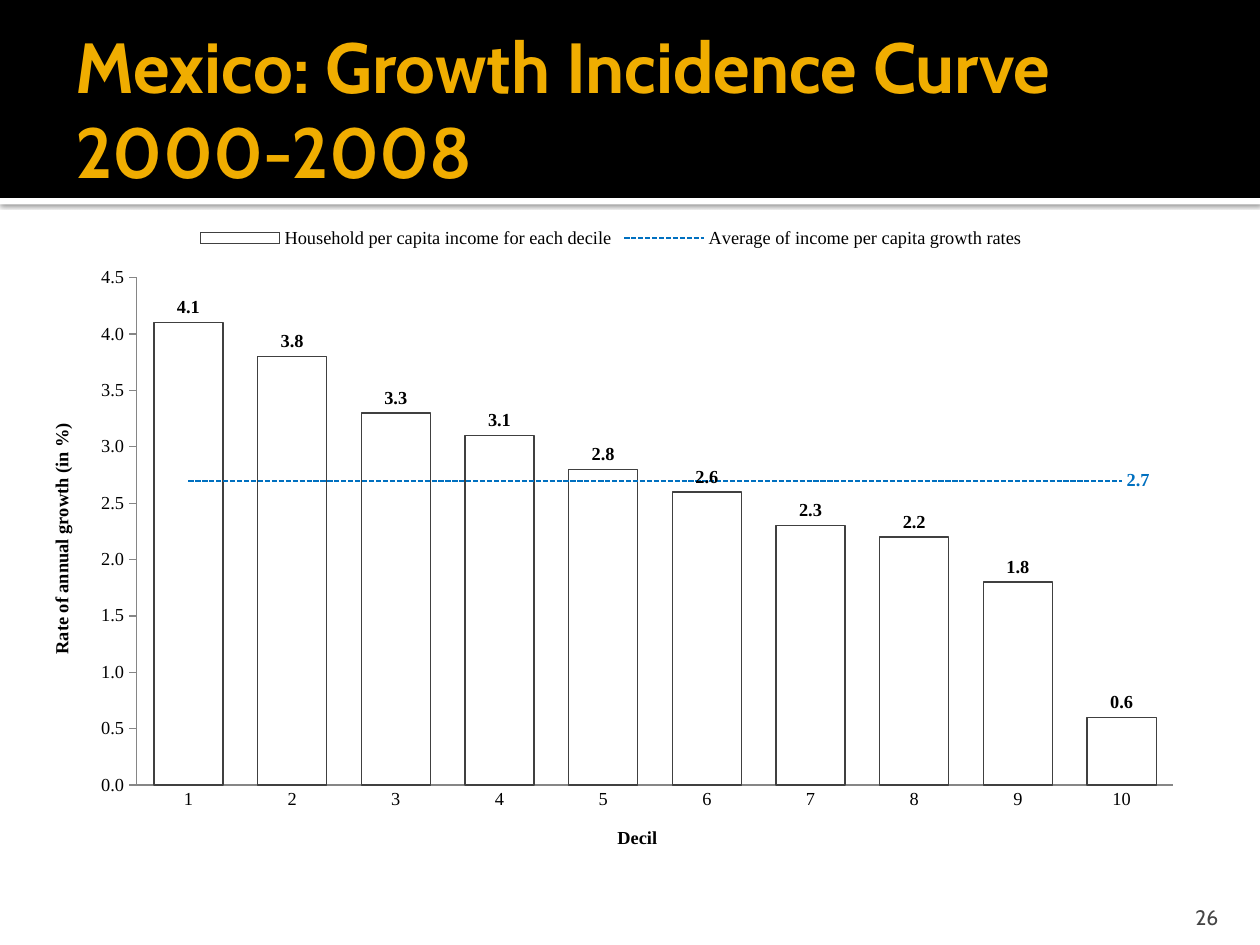
from lxml import etree
from pptx import Presentation
from pptx.chart.data import CategoryChartData
from pptx.dml.color import RGBColor
from pptx.enum.chart import XL_CHART_TYPE, XL_LABEL_POSITION, XL_LEGEND_POSITION, XL_MARKER_STYLE, XL_TICK_MARK
from pptx.enum.dml import MSO_LINE
from pptx.enum.shapes import MSO_SHAPE
from pptx.enum.text import MSO_ANCHOR, PP_ALIGN
from pptx.oxml import parse_xml
from pptx.oxml.ns import nsdecls, qn
from pptx.util import Cm, Pt

COLUMNS = XL_CHART_TYPE.COLUMN_CLUSTERED
DASHED = MSO_LINE.SQUARE_DOT
NO_TICK, OUTSIDE_TICK = XL_TICK_MARK.NONE, XL_TICK_MARK.OUTSIDE
RECTANGLE = MSO_SHAPE.RECTANGLE

COLORS = {"white": "FFFFFF", "black": "000000", "title": "F0AD00", "number": "454545",
          "outline": "404040", "axis": "868686", "average": "0070C0"}
HEADING_FONT, CHART_FONT = "Cabin", "Times New Roman"
NUMBER_FORMAT = "#,##0.0"
DECILE_GROWTH = [4.1, 3.8, 3.3, 3.1, 2.8, 2.6, 2.3, 2.2, 1.8, 0.6]
AVERAGE_GROWTH = 2.7


def color(name):
    return RGBColor.from_string(COLORS[name])


def style_font(font, name, size, color_name, bold=False):
    font.name, font.size, font.bold = name, Pt(size), bold
    font.color.rgb = color(color_name)


def style_line(line, color_name, width=0.75):
    line.color.rgb = color(color_name)
    line.width = Pt(width)


def set_insets(text_frame, left, top, right, bottom):
    text_frame.margin_left, text_frame.margin_top = left, top
    text_frame.margin_right, text_frame.margin_bottom = right, bottom


def add_band(slide, left, top, width, height, color_name):
    """Add a plain rectangle behind the title."""
    band = slide.shapes.add_shape(RECTANGLE, left, top, width, height)
    band.shadow.inherit = False
    band.fill.solid()
    band.fill.fore_color.rgb = color(color_name)
    band.line.fill.background()
    slide.shapes.title.element.addprevious(band.element)
    return band


def add_header(slide, left, top, width, height):
    rule = add_band(slide, left, top + height, width, Cm(0.13), "white")
    effects = rule.element.spPr.find(qn("a:effectLst"))
    effects.append(parse_xml(
        f'<a:outerShdw {nsdecls("a")} blurRad="{Pt(2.5)}" dist="{Pt(0.8)}" dir="5400000" '
        f'algn="t" rotWithShape="0"><a:srgbClr val="{COLORS["black"]}">'
        '<a:alpha val="60000"/></a:srgbClr></a:outerShdw>'))
    add_band(slide, left, top, width, height, "black")

    title = slide.shapes.title
    title.left, title.top = left + Cm(1.27), top + Cm(0.43)
    title.width, title.height = width - Cm(2.54), Cm(3.48)
    text_frame = title.text_frame
    text_frame.text = "Mexico: Growth Incidence Curve 2000-2008"
    text_frame.word_wrap = True
    text_frame.vertical_anchor = MSO_ANCHOR.MIDDLE
    set_insets(text_frame, Cm(0.25), Cm(0.13), Cm(0.13), Cm(0.13))
    paragraph = text_frame.paragraphs[0]
    paragraph.alignment = PP_ALIGN.LEFT
    style_font(paragraph.runs[0].font, HEADING_FONT, 40.5, "title", True)


def add_page_number(slide, left, top, width, height):
    text_frame = slide.shapes.add_textbox(left, top, width, height).text_frame
    text_frame.text = "26"
    text_frame.word_wrap = True
    text_frame.vertical_anchor = MSO_ANCHOR.BOTTOM
    set_insets(text_frame, Cm(0.25), Cm(0.13), Cm(0.25), 0)
    paragraph = text_frame.paragraphs[0]
    paragraph.alignment = PP_ALIGN.RIGHT
    style_font(paragraph.runs[0].font, HEADING_FONT, 12, "number")


def move_last_series_to_line(chart):
    """Draw the last column series as a line on the same axes."""
    bar_chart = chart._chartSpace.chart.plotArea.find(qn("c:barChart"))
    series = bar_chart.findall(qn("c:ser"))[-1]
    line_chart = parse_xml(
        f'<c:lineChart {nsdecls("c")}><c:grouping val="standard"/><c:varyColors val="0"/>'
        '<c:marker val="1"/></c:lineChart>')
    for bar_only in series.findall(qn("c:invertIfNegative")):
        series.remove(bar_only)
    line_chart.insert(2, series)
    for axis_id in bar_chart.findall(qn("c:axId")):
        etree.SubElement(line_chart, qn("c:axId")).set("val", axis_id.get("val"))
    bar_chart.addnext(line_chart)


def set_plot_layout(chart, **fractions):
    """Fix the inner plot area as fractions of the chart."""
    plot_area = chart._chartSpace.chart.plotArea
    for old_layout in plot_area.findall(qn("c:layout")):
        plot_area.remove(old_layout)
    modes = '<c:layoutTarget val="inner"/><c:xMode val="edge"/><c:yMode val="edge"/>'
    places = "".join(f'<c:{key} val="{value}"/>' for key, value in fractions.items())
    plot_area.insert(0, parse_xml(
        f'<c:layout {nsdecls("c")}><c:manualLayout>{modes}{places}</c:manualLayout></c:layout>'))


def style_axis(axis, title, tick_mark):
    axis.has_major_gridlines = False
    axis.major_tick_mark, axis.minor_tick_mark = tick_mark, NO_TICK
    style_line(axis.format.line, "axis")
    text_frame = axis.axis_title.text_frame
    text_frame.text = title
    style_font(text_frame.paragraphs[0].runs[0].font, CHART_FONT, 10.5, "black", True)


def style_columns(plot):
    plot.gap_width = 50
    plot.vary_by_categories = False
    columns = plot.series[0]
    columns.format.fill.solid()
    columns.format.fill.fore_color.rgb = color("white")
    style_line(columns.format.line, "outline")
    labels = columns.data_labels
    labels.show_value = True
    labels.number_format, labels.number_format_is_linked = NUMBER_FORMAT, False
    labels.position = XL_LABEL_POSITION.OUTSIDE_END
    style_font(labels.font, CHART_FONT, 10.5, "black", True)


def style_average(series):
    series.smooth = False
    series.marker.style = XL_MARKER_STYLE.NONE
    style_line(series.format.line, "average", 1)
    series.format.line.dash_style = DASHED
    label = series.points[len(DECILE_GROWTH) - 1].data_label
    label.position = XL_LABEL_POSITION.RIGHT
    style_font(label.font, CHART_FONT, 10.5, "average", True)
    series.data_labels.show_value = False


def add_growth_chart(slide, left, top, width, height):
    data = CategoryChartData(number_format=NUMBER_FORMAT)
    data.categories = [str(decile + 1) for decile in range(len(DECILE_GROWTH))]
    data.add_series("Household per capita income for each decile", DECILE_GROWTH)
    data.add_series("Average of income per capita growth rates",
                    [AVERAGE_GROWTH] * len(DECILE_GROWTH))
    chart = slide.shapes.add_chart(COLUMNS, left, top, width, height, data).chart
    chart.has_title = False
    style_font(chart.font, CHART_FONT, 10.5, "black")
    chart.has_legend = True
    chart.legend.position = XL_LEGEND_POSITION.TOP
    chart.legend.include_in_layout = False

    move_last_series_to_line(chart)
    set_plot_layout(chart, x=0.095, y=0.095, w=0.885, h=0.76)
    columns_plot, line_plot = chart.plots
    style_columns(columns_plot)
    style_average(line_plot.series[0])

    style_axis(chart.category_axis, "Decil", NO_TICK)
    value_axis = chart.value_axis
    style_axis(value_axis, "Rate of annual growth (in %)", OUTSIDE_TICK)
    value_axis.minimum_scale, value_axis.maximum_scale, value_axis.major_unit = 0, 4.5, 0.5
    value_axis.tick_labels.number_format = NUMBER_FORMAT
    value_axis.tick_labels.number_format_is_linked = False


def main():
    presentation = Presentation()
    presentation.slide_width, presentation.slide_height = Cm(25.4), Cm(19.05)
    slide = presentation.slides.add_slide(presentation.slide_layouts[5])
    add_header(slide, 0, 0, presentation.slide_width, Cm(3.99))
    add_growth_chart(slide, Cm(0.51), Cm(4.32), Cm(23.62), Cm(13.46))
    add_page_number(slide, Cm(22.78), Cm(17.98), Cm(2.03), Cm(0.76))
    presentation.save("out.pptx")


if __name__ == "__main__":
    main()
